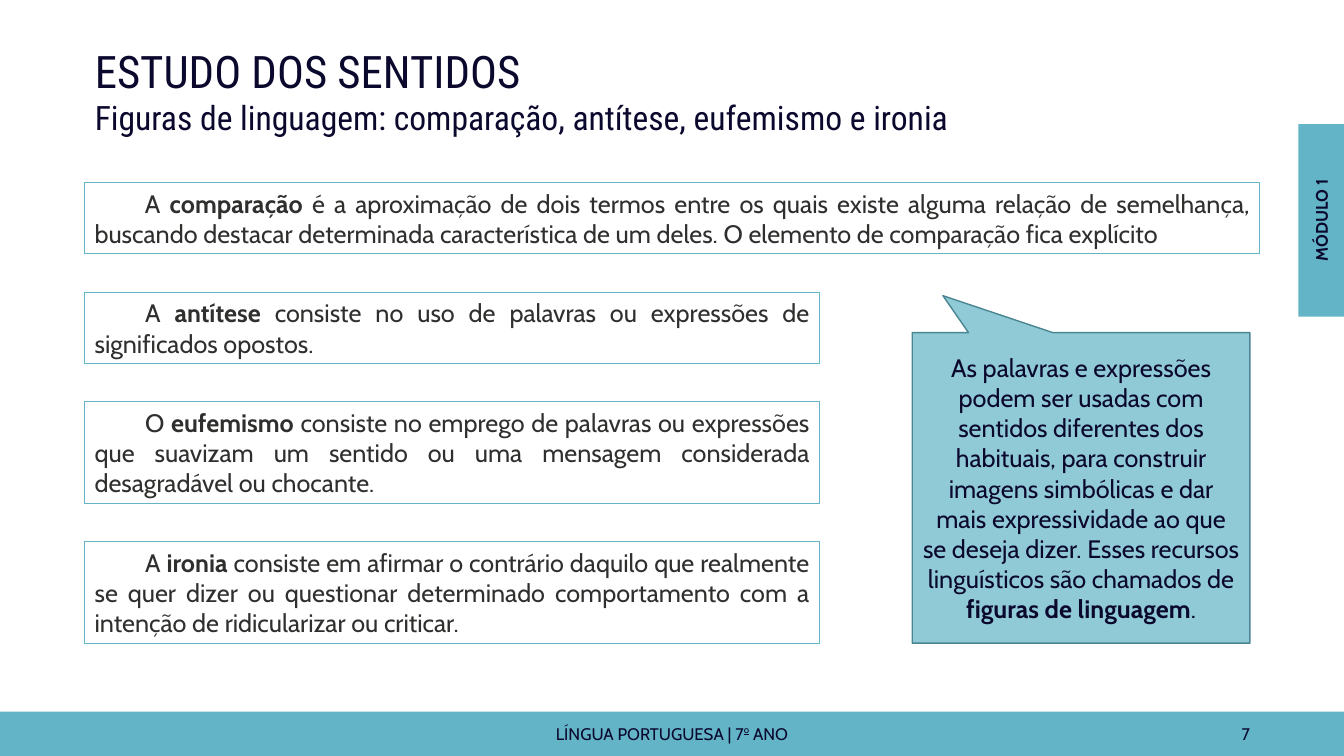
from lxml import etree
from pptx import Presentation
from pptx.dml.color import RGBColor
from pptx.enum.shapes import MSO_SHAPE as Preset
from pptx.enum.text import MSO_ANCHOR as Anchor, MSO_AUTO_SIZE as AutoSize, PP_ALIGN as Align
from pptx.oxml.ns import qn
from pptx.util import Pt

COLOURS = {"navy": "0B082E", "text": "2F2F2E", "teal": "62B4C6", "edge": "498592"}
BODY_FONT, TITLE_FONT = "Cabin", "Roboto Condensed"
PAGE_WIDTH, PAGE_HEIGHT = 960, 540
GAP = 27.2
LINE_HEIGHT, BOX_PADDING = 21.6, 7.9

COMPARISON = ("A ", "comparação", " é a aproximação de dois termos entre os quais existe alguma "
              "relação de semelhança, buscando destacar determinada característica de um deles. "
              "O elemento de comparação fica explícito")
# Line count and text of each narrow definition
DEFINITIONS = [
    (2, ("A ", "antítese", " consiste no uso de palavras ou expressões de significados opostos.")),
    (3, ("O ", "eufemismo", " consiste no emprego de palavras ou expressões que suavizam um "
         "sentido ou uma mensagem considerada desagradável ou chocante.")),
    (3, ("A ", "ironia", " consiste em afirmar o contrário daquilo que realmente se quer dizer ou "
         "questionar determinado comportamento com a intenção de ridicularizar ou criticar.")),
]
CALLOUT = ("As palavras e expressões podem ser usadas com sentidos diferentes dos habituais, para "
           "construir imagens simbólicas e dar mais expressividade ao que se deseja dizer. Esses "
           "recursos linguísticos são chamados de ", "figuras de linguagem", ".")


def colour(name):
    return RGBColor.from_string(COLOURS[name])


def style(span, size, tint="navy", font=BODY_FONT, bold=False):
    span.font.size, span.font.name, span.font.bold = Pt(size), font, bold
    span.font.color.rgb = colour(tint)


def add_panel(page, box, preset=Preset.RECTANGLE, fill=None, line=None, weight=0.75):
    panel = page.shapes.add_shape(preset, *map(Pt, box))
    panel.shadow.inherit = False
    if fill:
        panel.fill.solid()
        panel.fill.fore_color.rgb = colour(fill)
    else:
        panel.fill.background()
    if line:
        panel.line.color.rgb, panel.line.width = colour(line), Pt(weight)
    else:
        panel.line.fill.background()
    return panel


def add_label(page, box, pieces, align, bold=False):
    label = page.shapes.add_textbox(*map(Pt, box))
    frame = label.text_frame
    frame.word_wrap, frame.vertical_anchor = True, Anchor.MIDDLE
    para = frame.paragraphs[0]
    para.alignment = align
    for piece in pieces:
        span = para.add_run()
        span.text = piece
        style(span, 12, bold=bold)
    return label


def write_emphasised(panel, pieces, align, tint):
    """Write three pieces of text, the middle one in bold."""
    frame = panel.text_frame
    frame.word_wrap, frame.vertical_anchor = True, Anchor.MIDDLE
    para = frame.paragraphs[0]
    para.alignment = align
    for index, piece in enumerate(pieces):
        span = para.add_run()
        span.text = piece
        style(span, 18, tint, bold=index == 1)
    return para


def add_heading(page, box):
    title = page.shapes.title
    title.left, title.top, title.width, title.height = map(Pt, box)
    frame = title.text_frame
    frame.text = "ESTUDO DOS SENTIDOS\nFiguras de linguagem: comparação, antítese, eufemismo e ironia"
    frame.word_wrap, frame.auto_size = True, AutoSize.NONE
    frame.vertical_anchor = Anchor.TOP
    for para, size in zip(frame.paragraphs, (32, 24)):
        para.alignment = Align.LEFT
        style(para.runs[0], size, font=TITLE_FONT)


def add_definition(page, box, pieces):
    panel = add_panel(page, box, line="teal")
    para = write_emphasised(panel, pieces, Align.JUSTIFY, "text")
    para._p.get_or_add_pPr().set("indent", str(Pt(36)))


def add_definitions(page, left, top, wide, narrow):
    height = 2 * LINE_HEIGHT + BOX_PADDING
    add_definition(page, (left, top, wide, height), COMPARISON)
    for lines, pieces in DEFINITIONS:
        top += height + GAP
        height = lines * LINE_HEIGHT + BOX_PADDING
        add_definition(page, (left, top, narrow, height), pieces)


def add_callout(page, box):
    callout = add_panel(page, box, Preset.RECTANGULAR_CALLOUT, "teal", "edge", 1)
    callout.adjustments[0], callout.adjustments[1] = -0.409, -0.619
    # 70% opaque fill
    fill_colour = callout._element.spPr.find(qn("a:solidFill"))[0]
    etree.SubElement(fill_colour, qn("a:alpha")).set("val", "70000")
    write_emphasised(callout, CALLOUT, Align.CENTER, "navy")


def add_module_tab(page, box):
    left, top, width, height = box
    add_panel(page, box, fill="teal")
    # The label is as long as the tab is high, then turned about its centre
    label_box = (left + (width - height) / 2, top + (height - LINE_HEIGHT) / 2, height, LINE_HEIGHT)
    label = add_label(page, label_box, ["MÓDULO 1"], Align.CENTER, bold=True)
    label.rotation = 270


def add_footer(page, box):
    left, top, width, height = box
    add_panel(page, box, fill="teal")
    label_top, label_height = top + 2.2, 27.4
    subject = add_label(page, (left + 318, label_top, 324, label_height),
                        ["LÍNGUA PORTUGUESA | 7", "o", " ANO"], Align.CENTER)
    number = add_label(page, (left + 678, label_top, 222, label_height), ["7"], Align.RIGHT)
    for label in (subject, number):
        label.text_frame.paragraphs[0].space_after = Pt(6)
    # Raised, underlined ordinal mark
    ordinal = subject.text_frame.paragraphs[0].runs[1]
    ordinal.font.underline = True
    ordinal._r.get_or_add_rPr().set("baseline", "45000")


def main():
    deck = Presentation()
    deck.slide_width, deck.slide_height = Pt(PAGE_WIDTH), Pt(PAGE_HEIGHT)
    page = deck.slides.add_slide(deck.slide_layouts[5])
    add_footer(page, (0, 508.3, PAGE_WIDTH, 32.4))
    add_module_tab(page, (927.4, 88.6, 32.6, 137.5))
    add_heading(page, (60.5, 27.4, 653, 74.9))
    add_definitions(page, 60.5, 130.3, 839.5, 524.9)
    add_callout(page, (651.6, 237.6, 241.2, 221.8))
    deck.save("out.pptx")


if __name__ == "__main__":
    main()
